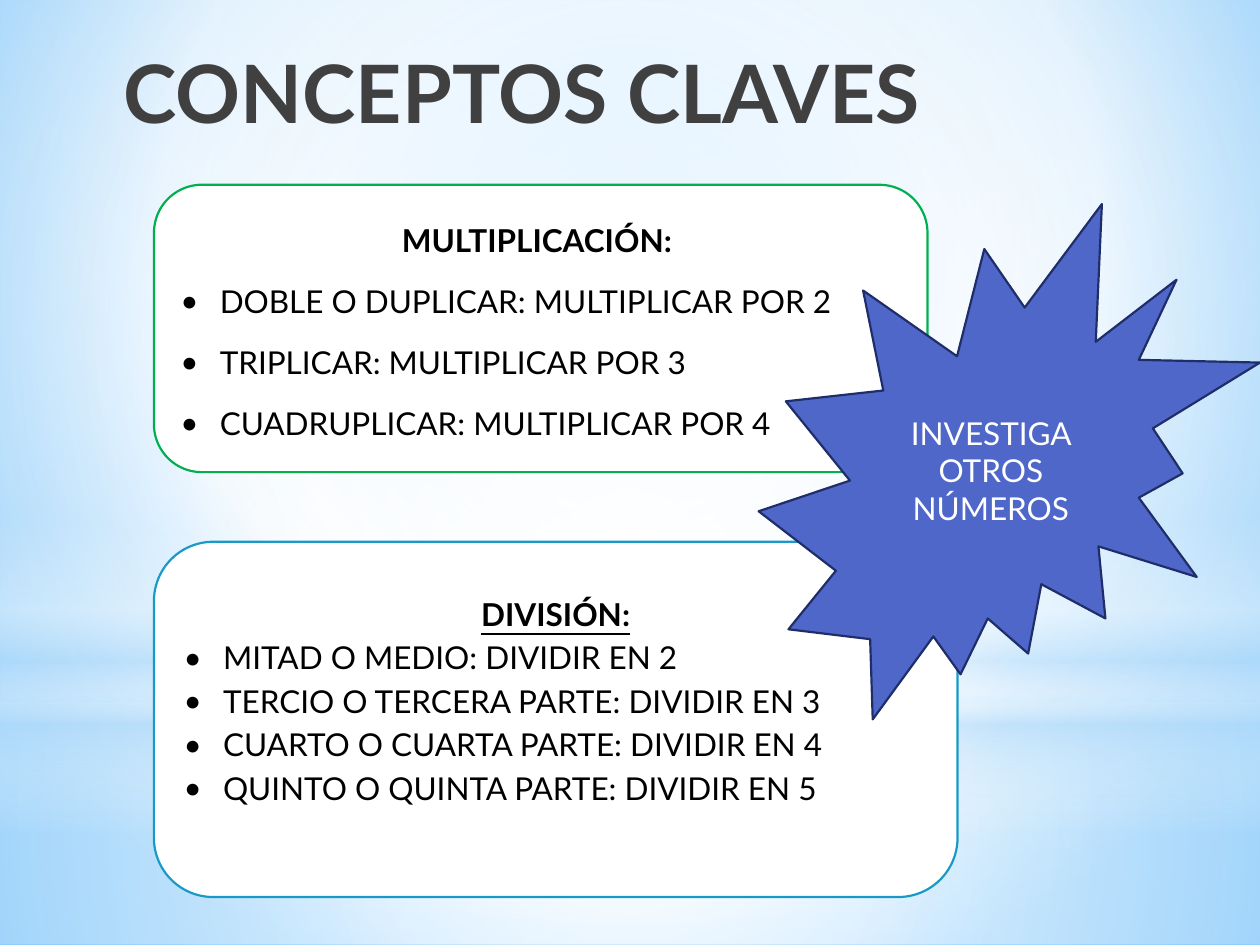
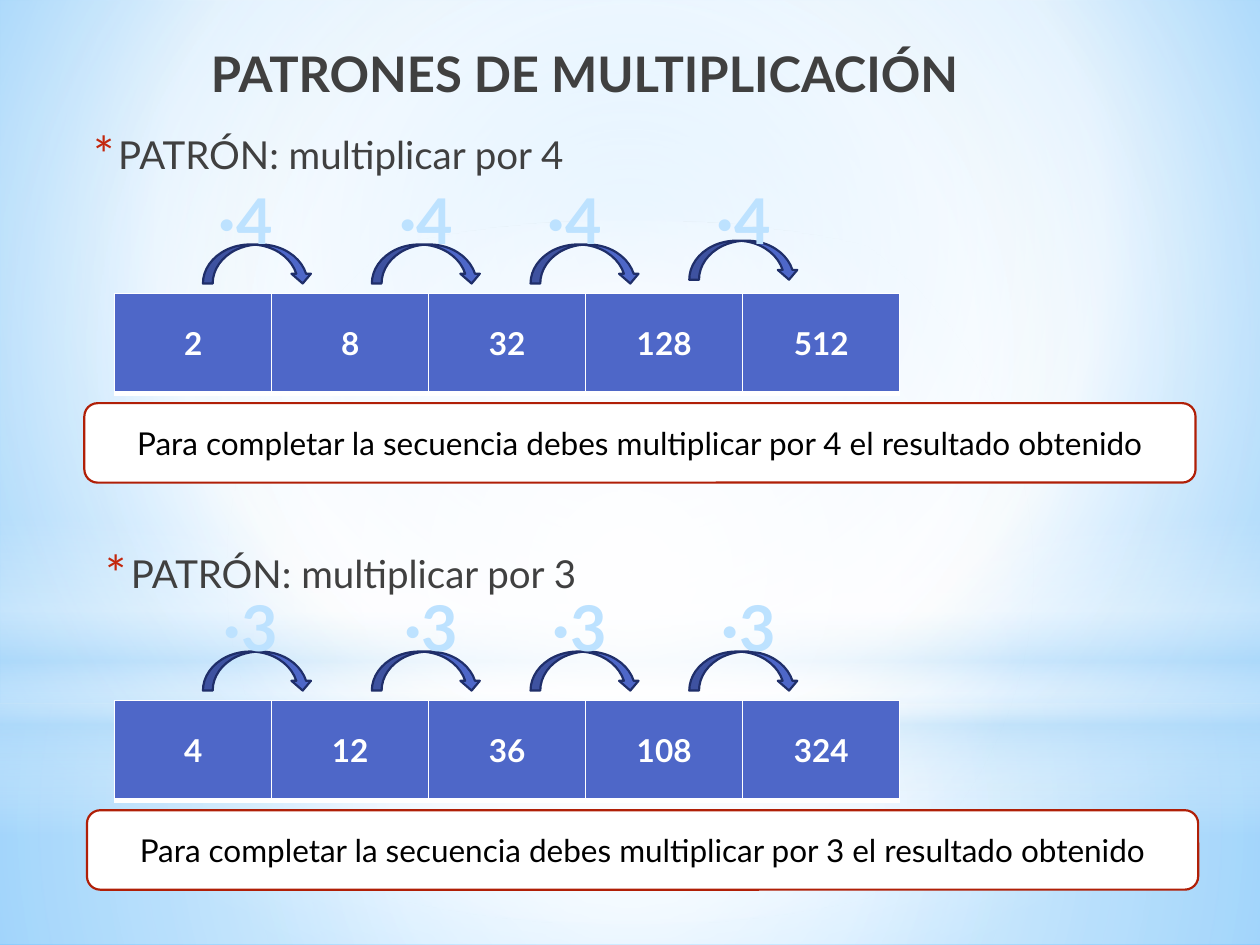
from dataclasses import dataclass

from lxml.etree import SubElement
from pptx import Presentation
from pptx.dml.color import RGBColor
from pptx.enum.shapes import MSO_SHAPE
from pptx.enum.text import MSO_ANCHOR, MSO_AUTO_SIZE, PP_ALIGN
from pptx.oxml import parse_xml
from pptx.oxml.ns import nsdecls, qn
from pptx.util import Pt


@dataclass(frozen=True)
class Theme:
    """Colours, font, type sizes and line widths of the deck."""
    font: str = "Lato"
    ink: str = "404040"
    black: str = "000000"
    white: str = "FFFFFF"
    indigo: str = "4E67C8"
    navy: str = "1F2E69"
    green: str = "00B050"
    blue: str = "1999C6"
    red: str = "B01F07"
    star: str = "C3260C"
    pale: str = "BDE2FF"
    haze: str = "B4DCFA"
    sky: str = "9ED5FF"
    deep_sky: str = "5BB9FF"
    title: float = 46
    subtitle: float = 28
    caption: float = 22
    body: float = 18
    factor: float = 36
    outline: float = 1.25


THEME = Theme()


@dataclass(frozen=True)
class Box:
    """A rectangle in points."""
    left: float
    top: float
    width: float
    height: float

    def inside(self, left, top, width, height):
        """Return a box placed relative to this one."""
        return Box(self.left + left, self.top + top, width, height)

    def lengths(self):
        """Return left, top, width and height as lengths."""
        return [Pt(value) for value in (self.left, self.top, self.width, self.height)]


def paint_gradient(fill, holder, stops, direction):
    """Give a fill the stops (position, colour, opacity) and a direction in XML."""
    fill.gradient()
    plain = next(holder.iter(qn("a:gradFill")))
    stop_xml = "".join(
        f'<a:gs pos="{position * 1000}"><a:srgbClr val="{colour}">'
        f'<a:alpha val="{opacity * 1000}"/></a:srgbClr></a:gs>'
        for position, colour, opacity in stops)
    plain.getparent().replace(plain, parse_xml(
        f'<a:gradFill {nsdecls("a")} rotWithShape="1"><a:gsLst>{stop_xml}</a:gsLst>'
        f'{direction}</a:gradFill>'))


def circular(left=50, top=50, right=50, bottom=50):
    """Return the XML of a circular gradient around a focus given in percent."""
    return (f'<a:path path="circle"><a:fillToRect l="{left * 1000}" t="{top * 1000}" '
            f'r="{right * 1000}" b="{bottom * 1000}"/></a:path>')


def add_backdrop(deck, page):
    """Build the sky and its light bands on the slide master."""
    master = deck.slide_master
    white, haze = THEME.white, THEME.haze
    sky = [(0, THEME.sky, 100), (60, white, 100), (100, THEME.deep_sky, 100)]
    paint_gradient(master.background.fill, master.element, sky, circular(20, 10, 20, 60))
    downward = '<a:lin ang="5400000" scaled="0"/>'
    layers = [
        (MSO_SHAPE.RECTANGLE, Box(0, 402, 720, 138), circular(),
         [(0, white, 91), (37, white, 76), (100, haze, 79)]),
        (MSO_SHAPE.RECTANGLE, Box(0, 0, 720, 402), circular(),
         [(0, white, 89), (48, white, 62), (100, haze, 79)]),
        (MSO_SHAPE.RECTANGLE, Box(0, 296.6, 720, 180), downward,
         [(0, white, 0), (29, white, 30), (45, haze, 40),
          (55, white, 26), (65, haze, 60), (100, white, 0)]),
        (MSO_SHAPE.OVAL, Box(0, 126, 720, 402), circular(),
         [(0, white, 100), (56, white, 0)]),
    ]
    for index, (kind, box, direction, stops) in enumerate(layers):
        layer = add_shape(page, kind, box, white)
        paint_gradient(layer.fill, layer.element, stops, direction)
        layer.element.nvSpPr.cNvPr.set("id", str(100 + index))
        master.shapes.element.insert(2 + index, layer.element)


def add_shape(page, kind, box, fill, line=None):
    """Add a flat preset shape with an optional outline."""
    shape = page.shapes.add_shape(kind, *box.lengths())
    shape.shadow.inherit = False
    shape.fill.solid()
    shape.fill.fore_color.rgb = RGBColor.from_string(fill)
    if line:
        shape.line.color.rgb = RGBColor.from_string(line)
        shape.line.width = Pt(THEME.outline)
    else:
        shape.line.fill.background()
    return shape


def write(frame, text, *, size=THEME.body, colour=THEME.black, bold=False, underline=False,
          align=PP_ALIGN.LEFT, spacing=None, after=0, bullet=None, indent=(0, 0),
          bullet_colour=None, bullet_size=100):
    """Write a paragraph, filling the first one while it is still empty."""
    first = frame.paragraphs[0]
    para = frame.add_paragraph() if first.runs else first
    para.alignment = align
    para.space_before, para.space_after = Pt(0), Pt(after)
    if spacing:
        para.line_spacing = spacing
    if bullet:
        set_bullet(para, bullet, indent, bullet_colour, bullet_size)
    span = para.add_run()
    span.text = text
    span.font.name, span.font.size = THEME.font, Pt(size)
    span.font.bold, span.font.underline = bold, underline
    span.font.color.rgb = RGBColor.from_string(colour)


def set_bullet(para, symbol, indent, colour, size):
    """Give a paragraph a bullet and a hanging indent in points."""
    properties = para._p.get_or_add_pPr()
    margin, hanging = indent
    properties.set("marL", str(Pt(margin)))
    properties.set("indent", str(Pt(hanging)))
    if colour:
        SubElement(SubElement(properties, qn("a:buClr")), qn("a:srgbClr")).set("val", colour)
    SubElement(properties, qn("a:buSzPct")).set("val", str(size * 1000))
    SubElement(properties, qn("a:buFont")).set("typeface", THEME.font)
    SubElement(properties, qn("a:buChar")).set("char", symbol)


def add_text_box(page, box, text, *, wrap=True, **style):
    """Add a text box with one paragraph."""
    frame = page.shapes.add_textbox(*box.lengths()).text_frame
    frame.word_wrap = wrap
    write(frame, text, **style)


def add_page(deck):
    """Add a title-only page."""
    return deck.slides.add_slide(deck.slide_layouts[5])


def set_title(page, box, text, **style):
    """Move and write the title placeholder."""
    title = page.shapes.title
    title.left, title.top, title.width, title.height = box.lengths()
    frame = title.text_frame
    frame.auto_size = MSO_AUTO_SIZE.NONE
    frame.vertical_anchor = MSO_ANCHOR.TOP
    write(frame, text, colour=THEME.ink, bold=True, **style)


def add_panel(page, kind, box, fill, line):
    """Add an outlined shape and return its middle-anchored text frame."""
    frame = add_shape(page, kind, box, fill, line).text_frame
    frame.word_wrap = True
    frame.vertical_anchor = MSO_ANCHOR.MIDDLE
    return frame


def add_concept_card(page, box, line, heading, items, *, underline=False, after=0, bottom=3.6):
    """Add a rounded card with a centred heading and bullets."""
    frame = add_panel(page, MSO_SHAPE.ROUNDED_RECTANGLE, box, THEME.white, line)
    frame.margin_bottom = Pt(bottom)
    write(frame, heading, bold=True, underline=underline, align=PP_ALIGN.CENTER,
          spacing=1.15, after=after)
    for item in items:
        write(frame, item, spacing=1.15, after=after, bullet="•", indent=(22.5, -22.5))


def add_number_row(page, box, numbers):
    """Add a one-row table holding a sequence."""
    table = page.shapes.add_table(1, len(numbers), *box.lengths()).table
    for cell, number in zip(table.iter_cells(), numbers):
        cell.vertical_anchor = MSO_ANCHOR.MIDDLE
        cell.fill.solid()
        cell.fill.fore_color.rgb = RGBColor.from_string(THEME.indigo)
        write(cell.text_frame, str(number), colour=THEME.white, bold=True,
              align=PP_ALIGN.CENTER)
        properties = cell._tc.get_or_add_tcPr()
        for index, (side, width) in enumerate((("L", 1), ("R", 1), ("T", 1), ("B", 3))):
            properties.insert(index, parse_xml(
                f'<a:ln{side} {nsdecls("a")} w="{Pt(width)}"><a:solidFill>'
                f'<a:srgbClr val="{THEME.white}"/></a:solidFill></a:ln{side}>'))


def add_pattern(page, box, start, factor, *, caption_at, note_left, label_shift=0, last_lift=0):
    """Add a caption, a sequence with its arrows and a note."""
    add_number_row(page, box.inside(0, 67.8, box.width, 57),
                   [start * factor ** step for step in range(5)])
    arrow_lefts = (50.5, 147, 237.7, 328.4)
    lifts = (0, 0, 0, last_lift)
    for left, lift in zip(arrow_lefts, lifts):
        add_shape(page, MSO_SHAPE.CURVED_DOWN_ARROW, box.inside(left, 39.7 - lift, 62.6, 22.3),
                  THEME.indigo, THEME.navy)
    for left in (50.5, 153.5, 238.5, 335):
        add_text_box(page, box.inside(left + label_shift, 0, 49, 51), f"·{factor}", wrap=False,
                     size=THEME.factor, colour=THEME.pale, bold=True, align=PP_ALIGN.CENTER)
    add_text_box(page, box.inside(*caption_at, 607, 62.6), f"PATRÓN: multiplicar por {factor}",
                 size=THEME.caption, colour=THEME.ink, bullet="*", indent=(18, -14.4),
                 bullet_colour=THEME.star, bullet_size=130)
    note = add_panel(page, MSO_SHAPE.ROUNDED_RECTANGLE, box.inside(note_left, 130.4, 635, 45.4),
                     THEME.white, THEME.red)
    write(note, f"Para completar la secuencia debes multiplicar por {factor} "
                "el resultado obtenido", align=PP_ALIGN.CENTER)


def build_concepts(page):
    """Fill the page of key concepts."""
    set_title(page, Box(20, 21, 512.6, 90), "CONCEPTOS CLAVES",
              size=THEME.title, align=PP_ALIGN.RIGHT)
    add_concept_card(page, Box(88, 105.6, 442, 164.2), THEME.green, "MULTIPLICACIÓN: ", [
        "DOBLE O DUPLICAR: MULTIPLICAR POR 2",
        "TRIPLICAR: MULTIPLICAR POR 3",
        "CUADRUPLICAR: MULTIPLICAR POR 4",
    ], after=10)
    add_concept_card(page, Box(88, 309.6, 459.2, 203), THEME.blue, "DIVISIÓN:", [
        "MITAD O MEDIO: DIVIDIR EN 2",
        "TERCIO O TERCERA PARTE: DIVIDIR EN 3",
        "CUARTO O CUARTA PARTE: DIVIDIR EN 4",
        "QUINTO O QUINTA PARTE: DIVIDIR EN 5",
    ], underline=True, bottom=28.4)
    burst = add_panel(page, MSO_SHAPE.EXPLOSION2, Box(433.5, 116.6, 286.5, 294.5),
                      THEME.indigo, THEME.navy)
    write(burst, "INVESTIGA OTROS NÚMEROS", colour=THEME.white, align=PP_ALIGN.CENTER)


def build_patterns(page):
    """Fill the page of multiplication patterns."""
    set_title(page, Box(31, 21, 606, 78), "PATRONES DE MULTIPLICACIÓN",
              size=THEME.subtitle, align=PP_ALIGN.CENTER)
    add_pattern(page, Box(65.5, 100, 448.6, 175.8), 2, 4, caption_at=(-23, -28.7),
                note_left=-17.3, last_lift=2.2)
    add_pattern(page, Box(65.5, 332.6, 448.6, 175.8), 4, 3, caption_at=(-15.8, -21.6),
                note_left=-15.8, label_shift=2.8)


def main():
    """Build and save the deck."""
    deck = Presentation()
    deck.slide_width, deck.slide_height = Pt(720), Pt(540)
    concepts, patterns = add_page(deck), add_page(deck)
    add_backdrop(deck, concepts)
    build_concepts(concepts)
    build_patterns(patterns)
    deck.save("out.pptx")


if __name__ == "__main__":
    main()
